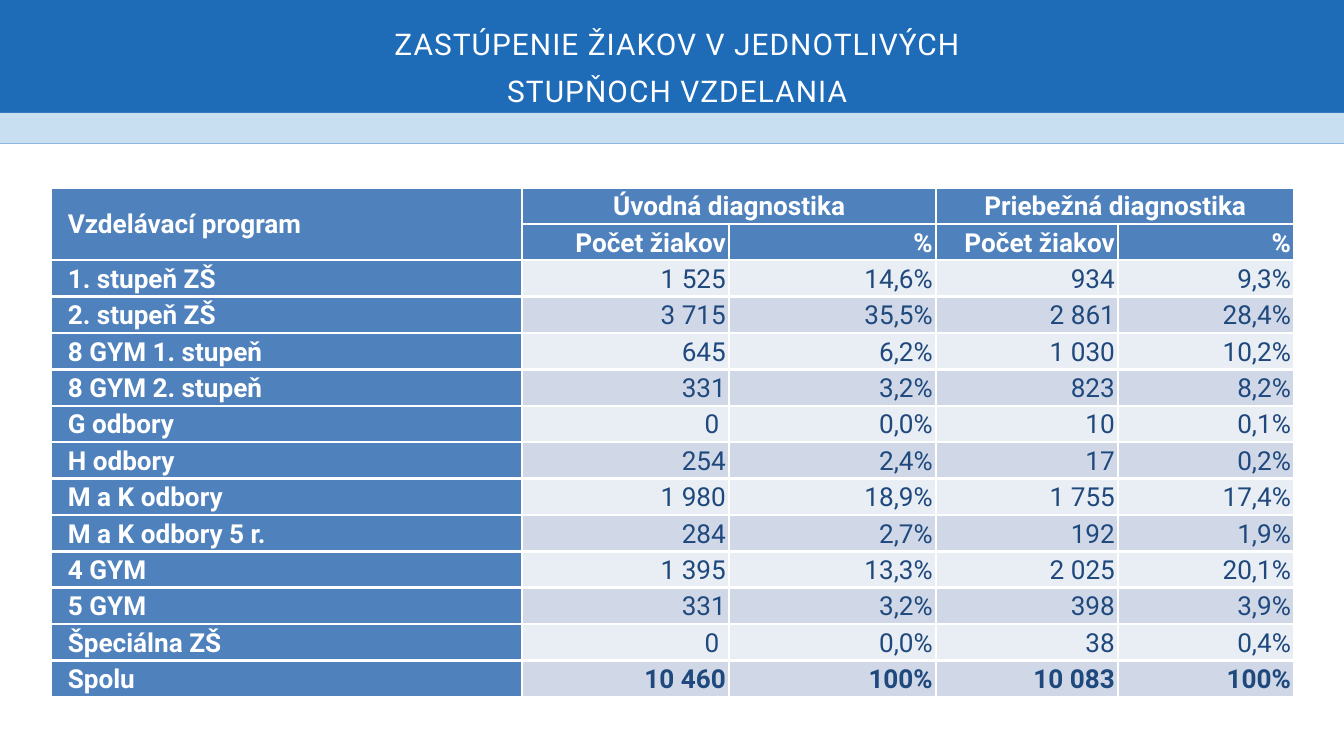
from lxml import etree
from pptx import Presentation
from pptx.dml.color import RGBColor
from pptx.enum import shapes, text
from pptx.oxml import ns
from pptx.util import Inches, Pt

# Content
TITLE = ["ZASTÚPENIE ŽIAKOV V JEDNOTLIVÝCH", "STUPŇOCH VZDELANIA"]
ROWS = [
    ("Vzdelávací program", "Úvodná diagnostika", "", "Priebežná diagnostika", ""),
    ("", "Počet žiakov", "%", "Počet žiakov", "%"),
    ("1. stupeň ZŠ", "1 525", "14,6%", "934", "9,3%"),
    ("2. stupeň ZŠ", "3 715", "35,5%", "2 861", "28,4%"),
    ("8 GYM 1. stupeň", "645", "6,2%", "1 030", "10,2%"),
    ("8 GYM 2. stupeň", "331", "3,2%", "823", "8,2%"),
    ("G odbory", "0 ", "0,0%", "10", "0,1%"),
    ("H odbory", "254", "2,4%", "17", "0,2%"),
    ("M a K odbory", "1 980", "18,9%", "1 755", "17,4%"),
    ("M a K odbory 5 r.", "284", "2,7%", "192", "1,9%"),
    ("4 GYM", "1 395", "13,3%", "2 025", "20,1%"),
    ("5 GYM", "331", "3,2%", "398", "3,9%"),
    ("Špeciálna ZŠ", "0 ", "0,0%", "38", "0,4%"),
    ("Spolu", "10 460", "100%", "10 083", "100%"),
]
MERGES = [((0, 0), (1, 0)), ((0, 1), (0, 2)), ((0, 3), (0, 4))]
COL_WIDTHS = [7.01, 3.08, 3.08, 2.71, 2.62]
TABLE_LEFT, TABLE_TOP, TABLE_HEIGHT = 0.76, 2.79, 7.58
HEADER_ROWS = 2

# Style
FONT = "Roboto"
WHITE = RGBColor(0xFF, 0xFF, 0xFF)
BAND_BLUE = RGBColor(0x1E, 0x6B, 0xB8)
BAND_PALE = RGBColor(0xC8, 0xDF, 0xF1)
HEAD_BLUE = RGBColor(0x4F, 0x81, 0xBD)
NAVY = RGBColor(0x1F, 0x49, 0x7D)
STRIPES = [RGBColor(0xE9, 0xED, 0xF4), RGBColor(0xD0, 0xD8, 0xE8)]
BANDS = [((-0.58, -0.1, 21.17, 2.24), BAND_BLUE), ((-0.66, 1.68, 21.17, 0.46), BAND_PALE)]
CELL_FORMAT = {
    "margin_left": Inches(0.05), "margin_right": Inches(0.05),
    "margin_top": 0, "margin_bottom": 0,
    "vertical_anchor": text.MSO_ANCHOR.MIDDLE,
}


def set_all(obj, values):
    for name, value in values.items():
        setattr(obj, name, value)


def add_text(p, words, size, color, bold=False):
    r = p.add_run()
    r.text = words
    set_all(r.font, {"name": FONT, "size": Pt(size), "bold": bold})
    r.font.color.rgb = color
    return r


def add_borders(cell):
    tc_pr = cell._tc.get_or_add_tcPr()
    for side in ("lnL", "lnR", "lnT", "lnB"):
        ln = etree.SubElement(tc_pr, ns.qn(f"a:{side}"), w=str(Pt(3)))
        fill = etree.SubElement(ln, ns.qn("a:solidFill"))
        etree.SubElement(fill, ns.qn("a:srgbClr"), val=str(WHITE))


prs = Presentation()
prs.slide_width, prs.slide_height = Inches(20), Inches(11.25)
s = prs.slides.add_slide(prs.slide_layouts[6])

# Title bands
for box, color in BANDS:
    sp = s.shapes.add_shape(shapes.MSO_SHAPE.RECTANGLE, *map(Inches, box))
    sp.shadow.inherit = False
    sp.fill.solid()
    sp.fill.fore_color.rgb = color
    sp.line.fill.background()

# Title
tf = s.shapes.add_textbox(*map(Inches, (0.16, 0.21, 19.84, 1.34))).text_frame
set_all(tf, {"word_wrap": True, "margin_left": 0, "margin_right": 0,
             "margin_top": 0, "margin_bottom": 0})
for i, line in enumerate(TITLE):
    p = tf.add_paragraph() if i else tf.paragraphs[0]
    set_all(p, {"alignment": text.PP_ALIGN.CENTER, "line_spacing": Pt(50.4)})
    r = add_text(p, line, 32, WHITE)
    r.font._element.set("spc", "110")

# Table
table = s.shapes.add_table(
    len(ROWS), len(COL_WIDTHS), Inches(TABLE_LEFT), Inches(TABLE_TOP),
    Inches(sum(COL_WIDTHS)), Inches(TABLE_HEIGHT)).table
for col, width in zip(table.columns, COL_WIDTHS):
    col.width = Inches(width)
for start, end in MERGES:
    table.cell(*start).merge(table.cell(*end))

for i, row in enumerate(ROWS):
    for j, words in enumerate(row):
        cell = table.cell(i, j)
        heading = i < HEADER_ROWS or j == 0
        set_all(cell, CELL_FORMAT)
        add_borders(cell)
        cell.fill.solid()
        cell.fill.fore_color.rgb = HEAD_BLUE if heading else STRIPES[i % 2]
        if not words:
            continue
        p = cell.text_frame.paragraphs[0]
        p.line_spacing = 1.07
        if j == 0:
            set_all(p._p.get_or_add_pPr(), {"marL": Inches(0.2), "indent": 0})
            p._p.pPr.set("marL", str(Inches(0.2)))
            p._p.pPr.set("indent", "0")
        else:
            p.alignment = text.PP_ALIGN.RIGHT if i else text.PP_ALIGN.CENTER
        add_text(p, words, 28, WHITE if heading else NAVY,
                 heading or i == len(ROWS) - 1)

prs.save("out.pptx")
